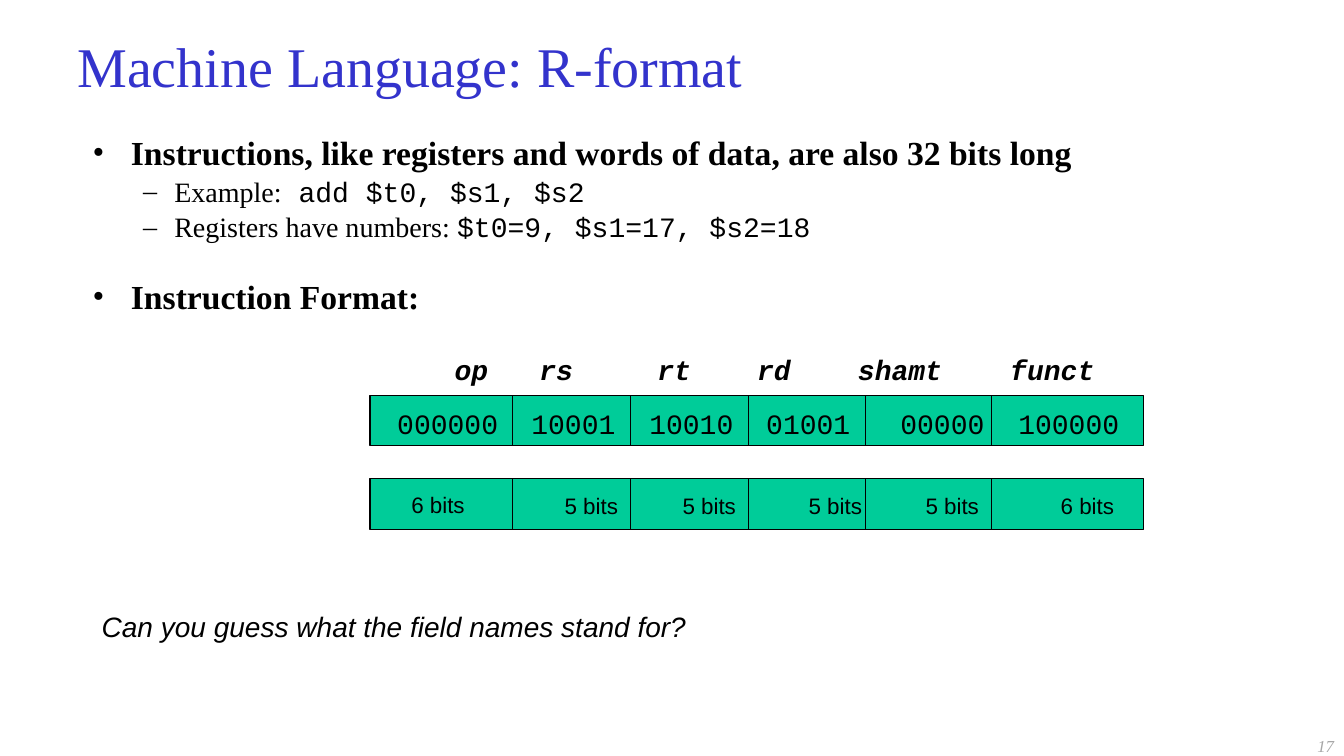
from lxml import etree
from pptx import Presentation
from pptx.dml.color import RGBColor
from pptx.enum.shapes import MSO_CONNECTOR, MSO_SHAPE
from pptx.enum.text import MSO_ANCHOR, PP_ALIGN
from pptx.oxml.ns import qn
from pptx.util import Inches, Pt

RECT = MSO_SHAPE.RECTANGLE
LINE = MSO_CONNECTOR.STRAIGHT
TOP, MIDDLE = MSO_ANCHOR.TOP, MSO_ANCHOR.MIDDLE
LEFT, RIGHT = PP_ALIGN.LEFT, PP_ALIGN.RIGHT
SERIF, SANS, MONO = "Times New Roman", "Arial", "Courier New"
BLACK, BLUE, GREEN, GRAY = "000000", "3333CC", "00CC99", "A6A6A6"

BAR_LEFT, BAR_WIDTH, BAR_HEIGHT = 3.67, 7.67, 0.5
CODE_TOP, SIZE_TOP = 3.92, 4.75
EDGES = [5.08, 6.25, 7.42, 8.58, 9.83]
FIELDS = [
    ("op", 4.51, "000000", 3.94, "6 bits", 4.08),
    ("rs", 5.35, "10001", 5.27, "5 bits", 5.6),
    ("rt", 6.52, "10010", 6.44, "5 bits", 6.77),
    ("rd", 7.51, "01001", 7.6, "5 bits", 8.02),
    ("shamt", 8.51, "00000", 8.93, "5 bits", 9.18),
    ("funct", 10.02, "100000", 10.1, "6 bits", 10.52),
]
POINTS = [
    (0, 5, [("Instructions, like registers and words of data, are also 32 bits long", SERIF)]),
    (1, 4, [("Example:", SERIF), (" add $t0, $s1, $s2", MONO)]),
    (1, 4, [("Registers have numbers: ", SERIF), ("$t0=9, $s1=17, $s2=18", MONO)]),
    (0, 26, [("Instruction Format:", SERIF)]),
]
LEVELS = [("•", 0.38, 0.38, 24, True), ("–", 0.81, 0.31, 20, False)]


def color(code):
    return RGBColor.from_string(code)


def style(run, face, size, tint=BLACK, bold=False, italic=False):
    font = run.font
    font.name, font.size = face, Pt(size)
    font.bold, font.italic = bold, italic
    font.color.rgb = color(tint)


def add_frame(slide, left, top, width, height, inset=0.1, anchor=TOP):
    box = slide.shapes.add_textbox(Inches(left), Inches(top), Inches(width), Inches(height))
    frame = box.text_frame
    frame.word_wrap = True
    frame.vertical_anchor = anchor
    frame.margin_left = frame.margin_right = Inches(inset)
    return frame


def add_label(slide, text, place, face, size, tint=BLACK, bold=False,
              italic=False, inset=0.1, anchor=MIDDLE, align=LEFT):
    frame = add_frame(slide, *place, inset, anchor)
    frame.text = text
    par = frame.paragraphs[0]
    par.alignment = align
    style(par.runs[0], face, size, tint, bold, italic)


def add_bullet(par, mark, indent, hang):
    props = par._p.get_or_add_pPr()
    props.set("marL", str(Inches(indent)))
    props.set("indent", str(-Inches(hang)))
    etree.SubElement(props, qn("a:buFont")).set("typeface", SERIF)
    etree.SubElement(props, qn("a:buChar")).set("char", mark)


def add_points(slide):
    frame = add_frame(slide, 0.82, 1.3, 10.95, 1.75)
    for index, (level, space, parts) in enumerate(POINTS):
        par = frame.add_paragraph() if index else frame.paragraphs[0]
        mark, indent, hang, size, bold = LEVELS[level]
        par.level = level
        par.line_spacing = 0.9
        par.space_before = Pt(space)
        add_bullet(par, mark, indent, hang)
        for text, face in parts:
            run = par.add_run()
            run.text = text
            style(run, face, size, bold=bold)


def add_bar(slide, top):
    bar = slide.shapes.add_shape(RECT, Inches(BAR_LEFT), Inches(top),
                                 Inches(BAR_WIDTH), Inches(BAR_HEIGHT))
    bar.shadow.inherit = False
    bar.fill.solid()
    bar.fill.fore_color.rgb = color(GREEN)
    bar.line.color.rgb = color(BLACK)
    bar.line.width = Pt(0.75)
    for edge in EDGES:
        line = slide.shapes.add_connector(LINE, Inches(edge), Inches(top),
                                          Inches(edge), Inches(top + BAR_HEIGHT))
        line.line.color.rgb = color(BLACK)
        line.line.width = Pt(0.75)
        etree.SubElement(line._element.spPr, qn("a:effectLst"))


def add_fields(slide):
    for top in (CODE_TOP, SIZE_TOP):
        add_bar(slide, top)
    for name, name_left, code, code_left, bits, bits_left in FIELDS:
        add_label(slide, name, (name_left, 3.44, 1.1, 0.44), MONO, 20,
                  bold=True, italic=True, inset=0)
        add_label(slide, code, (code_left, 4, 1.1, 0.4), MONO, 20, inset=0)
        bits_top = 4.82 if name == "op" else 4.83
        add_label(slide, bits, (bits_left, bits_top, 0.7, 0.37), SANS, 16, inset=0)


def main():
    deck = Presentation()
    deck.slide_width, deck.slide_height = Inches(13.33), Inches(7.5)
    slide = deck.slides.add_slide(deck.slide_layouts[6])
    add_label(slide, "Machine Language: R-format", (0.67, 0.24, 12, 0.82), SERIF, 40, BLUE)
    add_points(slide)
    add_fields(slide)
    add_label(slide, "Can you guess what the field names stand for?", (0.91, 6, 6.75, 0.5),
              SANS, 20, italic=True, anchor=TOP)
    add_label(slide, "17", (10.22, 7.3, 3.11, 0.2), SERIF, 12, GRAY, italic=True, align=RIGHT)
    deck.save("out.pptx")


if __name__ == "__main__":
    main()
